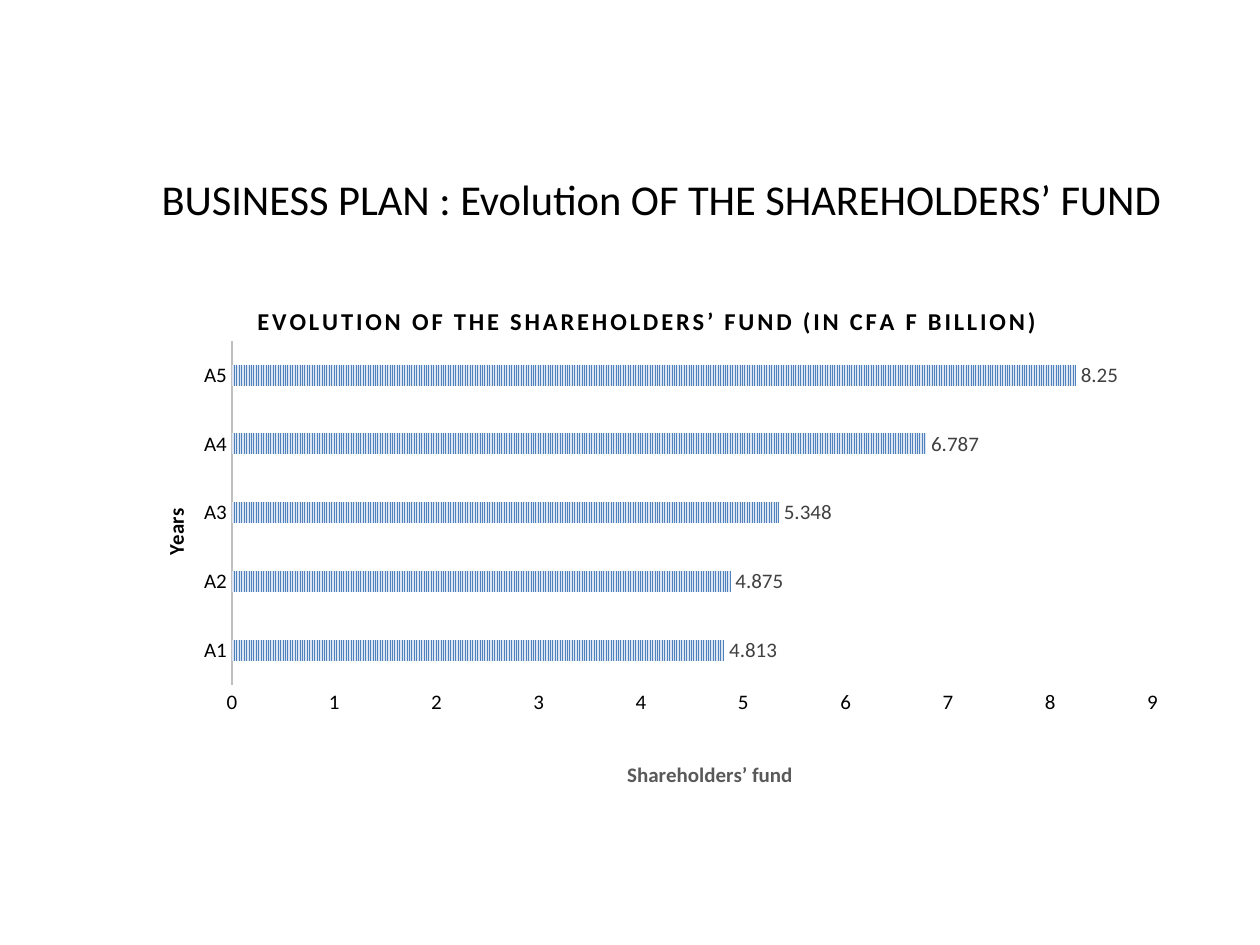
from lxml import etree
from pptx import Presentation
from pptx import util as u
from pptx.chart.data import CategoryChartData
from pptx.dml.color import RGBColor
from pptx.enum import chart as ch, dml, text
from pptx.oxml.ns import qn

WIDE, HIGH = u.Inches(10), u.Inches(7.5)
FACE = "Calibri"
YEARS = ["A1", "A2", "A3", "A4", "A5"]
FUNDS = [4.813, 4.875, 5.348, 6.787, 8.25]


def hue(code):
    return RGBColor.from_string(code)


def style(font, size, code="000000", bold=False):
    font.name, font.size, font.bold = FACE, u.Pt(size), bold
    font.color.rgb = hue(code)


def share(x, y, w, h):
    """Turn shares of the slide into a box."""
    return int(WIDE * x), int(HIGH * y), int(WIDE * w), int(HIGH * h)


def place(node, after, **spots):
    """Fix a chart part at shares of the chart's size."""
    for old in node.findall(qn("c:layout")):
        node.remove(old)
    frame = etree.Element(qn("c:layout"))
    lay = etree.SubElement(frame, qn("c:manualLayout"))
    if "w" in spots:
        etree.SubElement(lay, qn("c:layoutTarget")).set("val", "inner")
    for key in ("x", "y"):
        etree.SubElement(lay, qn(f"c:{key}Mode")).set("val", "edge")
    for key, val in spots.items():
        etree.SubElement(lay, qn(f"c:{key}")).set("val", str(val))
    before = node.find(qn(after)) if after else None
    node.insert(0 if before is None else node.index(before) + 1, frame)


def label(title, words, size, code, x, y):
    """Write a chart or axis title and return its run."""
    para = title.text_frame.paragraphs[0]
    para.text = words
    run = para.runs[0]
    style(run.font, size, code, True)
    place(title._element, "c:tx", x=x, y=y)
    return run


def head(slide, box):
    frame = slide.shapes.add_textbox(*box).text_frame
    frame.word_wrap = True
    frame.vertical_anchor = text.MSO_ANCHOR.MIDDLE
    para = frame.paragraphs[0]
    para.text = "BUSINESS PLAN : Evolution OF THE SHAREHOLDERS’ FUND"
    para.alignment = text.PP_ALIGN.CENTER
    style(para.runs[0].font, 24.3)


def bars(plot):
    plot.gap_width, plot.overlap, plot.vary_by_categories = 227, -48, False
    fill = plot.series[0].format.fill
    fill.patterned()
    fill.pattern = dml.MSO_PATTERN.NARROW_VERTICAL
    fill.fore_color.rgb, fill.back_color.rgb = hue("4F81BD"), hue("DCE6F2")
    plot.has_data_labels = True
    tags = plot.data_labels
    tags.show_value = True
    tags.position = ch.XL_LABEL_POSITION.OUTSIDE_END
    style(tags.font, 12, "404040")


def axes(chart):
    years, funds = chart.category_axis, chart.value_axis
    for axis in (years, funds):
        axis.has_major_gridlines = False
        axis.major_tick_mark = axis.minor_tick_mark = ch.XL_TICK_MARK.NONE
        style(axis.tick_labels.font, 12)
    years.format.line.color.rgb = hue("BFBFBF")
    years.format.line.width = u.Pt(1.5)
    funds.format.line.fill.background()
    funds.minimum_scale, funds.maximum_scale, funds.major_unit = 0, 9, 1
    label(years.axis_title, "Years", 12, "000000", 0.03, 0.45)
    years.axis_title.text_frame._txBody.bodyPr.set("rot", "-5400000")
    label(funds.axis_title, "Shareholders’ fund", 12, "595959", 0.47, 0.94)


def graph(slide, box):
    data = CategoryChartData()
    data.categories = YEARS
    data.add_series("Series 1", FUNDS)
    kind = ch.XL_CHART_TYPE.BAR_CLUSTERED
    chart = slide.shapes.add_chart(kind, *box, data).chart
    chart.has_legend = False
    style(chart.font, 10)
    run = label(chart.chart_title,
                "EVOLUTION OF THE SHAREHOLDERS’ FUND (IN CFA F BILLION)",
                14, "000000", 0.12, 0.05)
    run.font._element.set("spc", "150")
    bars(chart.plots[0])
    axes(chart)
    area = chart._chartSpace.chart.plotArea
    place(area, None, x=0.1, y=0.13, w=0.87, h=0.67)


def main():
    deck = Presentation()
    deck.slide_width, deck.slide_height = WIDE, HIGH
    slide = deck.slides.add_slide(deck.slide_layouts[6])
    head(slide, share(0.08, 0.18, 0.89, 0.06))
    graph(slide, share(0.1, 0.29, 0.84, 0.55))
    deck.save("out.pptx")


if __name__ == "__main__":
    main()
